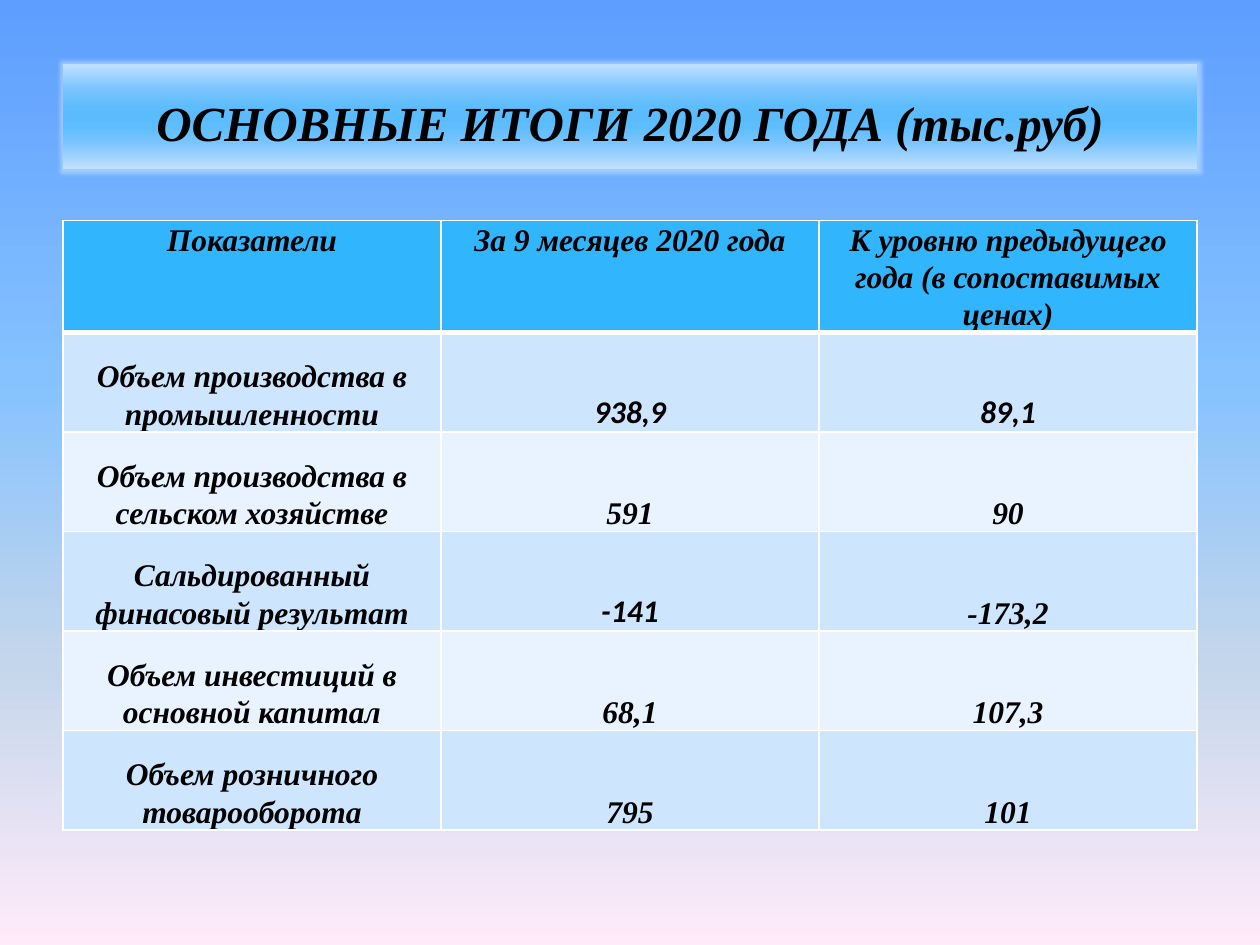
from pptx import Presentation
from pptx.dml.color import RGBColor
from pptx.enum.text import MSO_ANCHOR, MSO_AUTO_SIZE, PP_ALIGN
from pptx.oxml.ns import qn
from pptx.util import Inches, Pt
from lxml.etree import SubElement

BLACK = RGBColor(0x00, 0x00, 0x00)
WHITE = RGBColor(0xFF, 0xFF, 0xFF)
HEADER = RGBColor(0x31, 0xB6, 0xFD)
BAND_DARK = RGBColor(0xCE, 0xE5, 0xFE)
BAND_LIGHT = RGBColor(0xE8, 0xF3, 0xFF)
PALE_BLUE = RGBColor(0xC1, 0xE0, 0xFF)
SKY = RGBColor(0x5E, 0xBD, 0xFD)

BACKGROUND_STOPS = [
    (0, RGBColor(0x5E, 0x9E, 0xFF)),
    (40, RGBColor(0x85, 0xC2, 0xFF)),
    (70, RGBColor(0xC4, 0xD6, 0xEB)),
    (100, RGBColor(0xFF, 0xEB, 0xFA)),
]
TITLE_STOPS = [
    (0, PALE_BLUE),
    (25, RGBColor(0x76, 0xC3, 0xFD)),
    (40, SKY),
    (50, RGBColor(0x5A, 0xBC, 0xFD)),
    (60, SKY),
    (75, RGBColor(0x7A, 0xC5, 0xFF)),
    (100, PALE_BLUE),
]

SERIF = "Times New Roman"
SANS = "Calibri"
SANS_VALUES = {"938,9", "89,1", "-141"}
ROWS = [
    ("Показатели", "За 9 месяцев 2020 года",
     "К уровню предыдущего года (в сопоставимых ценах)"),
    ("Объем производства в промышленности", "938,9", "89,1"),
    ("Объем производства в сельском хозяйстве", "591", "90"),
    ("Сальдированный финасовый результат", "-141", "-173,2"),
    ("Объем инвестиций в основной капитал", "68,1", "107,3"),
    ("Объем розничного товарооборота", "795", "101"),
]


def set_gradient(fill, element, stops):
    fill.gradient()
    fill.gradient_angle = 270
    gs_list = next(element.iter(qn("a:gsLst")))
    for gs in list(gs_list):
        gs_list.remove(gs)
    for pos, color in stops:
        gs = SubElement(gs_list, qn("a:gs"), pos=str(pos * 1000))
        SubElement(gs, qn("a:srgbClr"), val=str(color))


def add_glow(sp, color, radius, alpha):
    effects = SubElement(sp._element.spPr, qn("a:effectLst"))
    glow = SubElement(effects, qn("a:glow"), rad=str(radius))
    clr = SubElement(glow, qn("a:srgbClr"), val=str(color))
    SubElement(clr, qn("a:alpha"), val=str(alpha * 1000))


def set_text(tf, text, size, font):
    tf.text = text
    p = tf.paragraphs[0]
    p.alignment = PP_ALIGN.CENTER
    p.line_spacing = 1.07
    r = p.runs[0]
    r.font.name = font
    r.font.size = Pt(size)
    r.font.bold = r.font.italic = True
    r.font.color.rgb = BLACK


def set_borders(cell, top, bottom):
    tc_pr = cell._tc.get_or_add_tcPr()
    for side, width in (("L", 1), ("R", 1), ("T", top), ("B", bottom)):
        ln = SubElement(tc_pr, qn(f"a:ln{side}"), w=str(Pt(width)))
        solid = SubElement(ln, qn("a:solidFill"))
        SubElement(solid, qn("a:srgbClr"), val=str(WHITE))


def add_title(s):
    sp = s.shapes.title
    sp.left, sp.top = Inches(0.5), Inches(0.51)
    sp.width, sp.height = Inches(9), Inches(0.83)
    set_gradient(sp.fill, sp._element, TITLE_STOPS)
    add_glow(sp, PALE_BLUE, Pt(5), 60)
    tf = sp.text_frame
    tf.auto_size = MSO_AUTO_SIZE.NONE
    tf.word_wrap = True
    tf.vertical_anchor = MSO_ANCHOR.MIDDLE
    tf.margin_top = Inches(0.1)
    set_text(tf, "ОСНОВНЫЕ ИТОГИ 2020 ГОДА (тыс.руб)", 28, SERIF)


def fill_cell(cell, text, row):
    cell.margin_left = cell.margin_right = Inches(0.07)
    cell.margin_top = cell.margin_bottom = 0
    cell.vertical_anchor = MSO_ANCHOR.BOTTOM if row else MSO_ANCHOR.TOP
    set_borders(cell, 3 if row == 1 else 1, 1 if row else 3)
    cell.fill.solid()
    band = BAND_DARK if row % 2 else BAND_LIGHT
    cell.fill.fore_color.rgb = band if row else HEADER
    set_text(cell.text_frame, text, 18, SANS if text in SANS_VALUES else SERIF)


def add_results_table(s):
    row_height = Inches(0.79)
    table = s.shapes.add_table(
        len(ROWS), len(ROWS[0]), Inches(0.5), Inches(1.75),
        Inches(9), row_height * len(ROWS)).table
    for i, values in enumerate(ROWS):
        table.rows[i].height = row_height
        for j, text in enumerate(values):
            fill_cell(table.cell(i, j), text, i)


def main():
    prs = Presentation()
    prs.slide_width, prs.slide_height = Inches(10), Inches(7.5)
    s = prs.slides.add_slide(prs.slide_layouts[5])
    set_gradient(s.background.fill, s._element, BACKGROUND_STOPS)
    add_results_table(s)
    add_title(s)
    prs.save("out.pptx")


if __name__ == "__main__":
    main()
